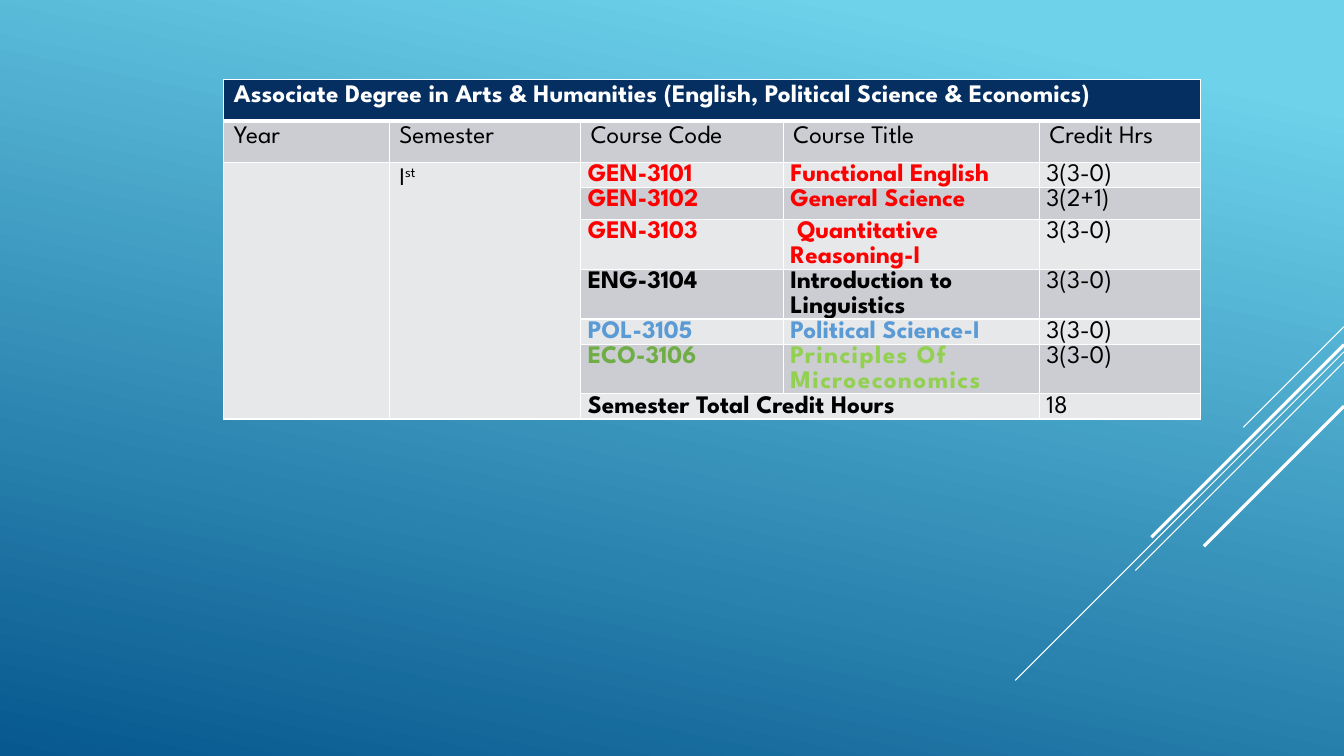
from lxml import etree
from pptx import Presentation
from pptx.dml.color import RGBColor
from pptx.enum.shapes import MSO_CONNECTOR
from pptx.oxml.ns import qn
from pptx.util import Inches, Pt

STRAIGHT = MSO_CONNECTOR.STRAIGHT
FONT = "League Spartan"
WHITE = RGBColor(0xFF, 0xFF, 0xFF)
BLACK = RGBColor(0, 0, 0)
RED = RGBColor(0xFF, 0, 0)
BLUE = RGBColor(0x5B, 0x9B, 0xD5)
GREEN = RGBColor(0x70, 0xAD, 0x47)
LIME = RGBColor(0x92, 0xD0, 0x50)
NAVY = RGBColor(0x05, 0x2F, 0x61)
DARK_BAND = RGBColor(0xCC, 0xCD, 0xD2)
LIGHT_BAND = RGBColor(0xE7, 0xE8, 0xEA)
SKY = RGBColor(0x6E, 0xD2, 0xEB)
DEEP_BLUE = RGBColor(0x06, 0x58, 0x8E)


def write_cell(cell, text, color=BLACK, bold=False, compact=False):
    paragraph = cell.text_frame.paragraphs[0]
    paragraph.text = text
    font = paragraph.runs[0].font
    font.name, font.size, font.bold = FONT, Pt(18), bold
    font.color.rgb = color
    if compact:
        cell.margin_left = cell.margin_right = Inches(0.07)
        cell.margin_top = cell.margin_bottom = 0
        paragraph.line_spacing = 1.07
    return paragraph


def set_borders(cell, widths):
    properties = cell._tc.get_or_add_tcPr()
    for index, (side, width) in enumerate(widths.items()):
        border = etree.Element(qn(f"a:ln{side}"), w=str(Pt(width)))
        fill = etree.SubElement(border, qn("a:solidFill"))
        etree.SubElement(fill, qn("a:srgbClr"), val=str(WHITE))
        properties.insert(index, border)


prs = Presentation()
prs.slide_width, prs.slide_height = Inches(13.33), Inches(7.5)
slide = prs.slides.add_slide(prs.slide_layouts[6])

# Background gradient
background = slide.background.fill
background.gradient()
background.gradient_angle = 258
for stop, color, position in zip(background.gradient_stops, (SKY, DEEP_BLUE), (0.1, 1)):
    stop.color.rgb = color
    stop.position = position

# Diagonal lines running down at 45 degrees from the right edge
for top, run, weight in [(3.24, 1, 0.75), (3.49, 3.26, 0.75), (3.59, 2.07, 0.75),
                         (3.42, 1.91, 2.25), (4.03, 1.39, 2.25)]:
    diagonal = slide.shapes.add_connector(
        STRAIGHT, Inches(13.33), Inches(top), Inches(13.33 - run), Inches(top + run))
    diagonal.line.color.rgb = WHITE
    diagonal.line.width = Pt(weight)
    etree.SubElement(diagonal._element.spPr, qn("a:effectLst"))

# Course table grid
column_widths = [1.64, 1.9, 2.01, 2.54, 1.6]
row_heights = [0.41, 0.41, 0.25, 0.32, 0.49, 0.49, 0.25, 0.49, 0.25]
last_row = len(row_heights) - 1
table = slide.shapes.add_table(
    len(row_heights), len(column_widths), Inches(2.22), Inches(0.79),
    Inches(sum(column_widths)), Inches(sum(row_heights))).table
table.first_row = table.horz_banding = False
for column, width in zip(table.columns, column_widths):
    column.width = Inches(width)
for row, height in zip(table.rows, row_heights):
    row.height = Inches(height)

# Banded fills and white borders, with a heavy rule under the title
for row_index, row in enumerate(table.rows):
    for column_index, cell in enumerate(row.cells):
        cell.fill.solid()
        if row_index == 0:
            cell.fill.fore_color.rgb = NAVY
        elif row_index % 2 and (column_index > 1 or row_index == 1):
            cell.fill.fore_color.rgb = DARK_BAND
        else:
            cell.fill.fore_color.rgb = LIGHT_BAND
        set_borders(cell, {"L": 1, "R": 1, "T": 3 if row_index == 1 else 1,
                           "B": 3 if row_index == 0 else 1})

# Merged areas: title, year, semester, total
table.cell(0, 0).merge(table.cell(0, 4))
table.cell(2, 0).merge(table.cell(last_row, 0))
table.cell(2, 1).merge(table.cell(last_row, 1))
table.cell(last_row, 2).merge(table.cell(last_row, 3))

# Title and column headings
write_cell(table.cell(0, 0),
           "Associate Degree in Arts & Humanities (English, Political Science & Economics)",
           WHITE, bold=True)
headings = ["Year", "Semester", "Course Code", "Course Title", "Credit Hrs"]
for column_index, heading in enumerate(headings):
    write_cell(table.cell(1, column_index), heading)

# Semester with raised ordinal
semester = write_cell(table.cell(2, 1), "I")
ordinal = semester.add_run()
ordinal.text = "st"
ordinal.font.name, ordinal.font.size, ordinal.font.bold = FONT, Pt(18), False
ordinal.font.color.rgb = BLACK
ordinal.font._element.set("baseline", "30000")

# Courses
courses = [
    ("GEN-3101", "Functional English", "3(3-0)", RED, RED),
    ("GEN-3102", "General Science", "3(2+1)", RED, RED),
    ("GEN-3103", " Quantitative Reasoning-I", "3(3-0)", RED, RED),
    ("ENG-3104", "Introduction to Linguistics", "3(3-0)", BLACK, BLACK),
    ("POL-3105", "Political Science-I", "3(3-0)", BLUE, BLUE),
    ("ECO-3106", "Principles Of Microeconomics", "3(3-0)", GREEN, LIME),
]
for row_index, (code, title, credits, code_color, title_color) in enumerate(courses, 2):
    write_cell(table.cell(row_index, 2), code, code_color, bold=True, compact=True)
    course_title = write_cell(table.cell(row_index, 3), title, title_color,
                              bold=True, compact=True)
    write_cell(table.cell(row_index, 4), credits, compact=True)
course_title.runs[0].font._element.set("spc", "100")  # last title is letter-spaced

# Semester total
write_cell(table.cell(last_row, 2), "Semester Total Credit Hours", bold=True, compact=True)
write_cell(table.cell(last_row, 4), "18", compact=True)

prs.save("out.pptx")
